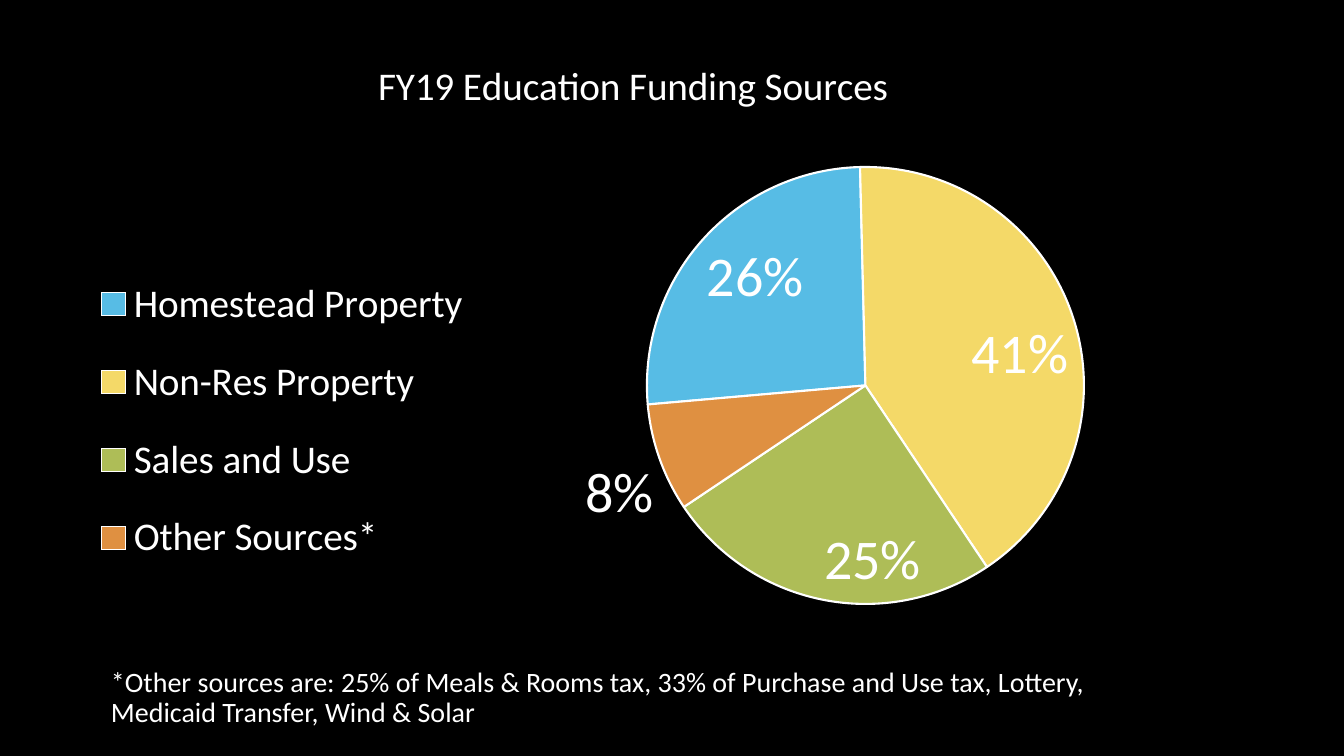
import pptx
import pptx.util
import pptx.chart.data
import pptx.dml.color
import pptx.enum.chart
import pptx.oxml

RGB = pptx.dml.color.RGBColor
BLACK = RGB(0x00, 0x00, 0x00)
WHITE = RGB(0xFF, 0xFF, 0xFF)
BLUE = RGB(0x57, 0xBC, 0xE5)
YELLOW = RGB(0xF4, 0xD9, 0x68)
GREEN = RGB(0xAE, 0xBD, 0x57)
ORANGE = RGB(0xDF, 0x90, 0x41)
FONT = "Calibri"
SPOT = pptx.enum.chart.XL_LABEL_POSITION
NS = "http://schemas.openxmlformats.org/drawingml/2006/chart"


def px(n):
    return pptx.util.Emu(round(n * 12192000 / 1344))


def style(font, size):
    font.name = FONT
    font.size = pptx.util.Pt(size)
    font.bold = False
    font.color.rgb = WHITE


deck = pptx.Presentation()
deck.slide_width, deck.slide_height = px(1344), px(756)
slide = deck.slides.add_slide(deck.slide_layouts[6])
slide.background.fill.solid()
slide.background.fill.fore_color.rgb = BLACK

sources = [
    ("Homestead Property", 0.26, BLUE, SPOT.INSIDE_END),
    ("Non-Res Property", 0.41, YELLOW, SPOT.INSIDE_END),
    ("Sales and Use", 0.25, GREEN, SPOT.INSIDE_END),
    ("Other Sources*", 0.08, ORANGE, SPOT.OUTSIDE_END),
]
data = pptx.chart.data.CategoryChartData(number_format="0%")
data.categories = [source[0] for source in sources]
data.add_series("Series 1", [source[1] for source in sources])
left, top, width, height = 74, 33, 1119, 655
chart = slide.shapes.add_chart(
    pptx.enum.chart.XL_CHART_TYPE.PIE, px(left), px(top), px(width), px(height), data
).chart
style(chart.font, 10)

chart.has_title = True
title = chart.chart_title
title.include_in_layout = False
title.text_frame.text = "FY19 Education Funding Sources"
style(title.text_frame.paragraphs[0].runs[0].font, 28)

chart.has_legend = True
legend = chart.legend
legend.position = pptx.enum.chart.XL_LEGEND_POSITION.LEFT
legend.include_in_layout = False
style(legend.font, 28)

pie = chart.plots[0]
pie.vary_by_categories = True
ring = pie.series[0]
labels = ring.data_labels
labels.show_value = True
labels.show_percentage = False
labels.number_format = "0%"
labels.number_format_is_linked = False
style(labels.font, 40)
for i, (name, share, color, spot) in enumerate(sources):
    point = ring.points[i]
    point.format.fill.solid()
    point.format.fill.fore_color.rgb = color
    point.format.line.color.rgb = WHITE
    point.format.line.width = pptx.util.Pt(1.5)
    style(point.data_label.font, 40)
    point.data_label.position = spot

tree = chart.element
turn = tree.find(f".//{{{NS}}}firstSliceAng")
if turn is None:
    turn = pptx.oxml.parse_xml(f'<c:firstSliceAng xmlns:c="{NS}"/>')
    tree.find(f".//{{{NS}}}pieChart").append(turn)
turn.set("val", "265")

places = [
    ("title", "tx", (371, 52), None),
    ("plotArea", None, (647, 167), (437, 437)),
    ("legend", "legendPos", (92, 250), (380, 342)),
]
for part, prior, (x, y), size in places:
    node = tree.find(f".//{{{NS}}}{part}")
    for old in node.findall(f"{{{NS}}}layout"):
        node.remove(old)
    inner = '<c:layoutTarget val="inner"/>' if part == "plotArea" else ""
    parts = [("x", (x - left) / width), ("y", (y - top) / height)]
    if size:
        parts += [("w", size[0] / width), ("h", size[1] / height)]
    modes = "".join(f'<c:{key}Mode val="edge"/>' for key in "xy")
    spans = "".join(f'<c:{key} val="{val:.4f}"/>' for key, val in parts)
    layout = pptx.oxml.parse_xml(
        f'<c:layout xmlns:c="{NS}"><c:manualLayout>{inner}{modes}{spans}'
        "</c:manualLayout></c:layout>"
    )
    if prior:
        node.find(f"{{{NS}}}{prior}").addnext(layout)
    else:
        node.insert(0, layout)

note = slide.shapes.add_textbox(px(101), px(663), px(1092), px(72)).text_frame
note.word_wrap = True
note.text = (
    "*Other sources are: 25% of Meals & Rooms tax, 33% of Purchase and Use tax, "
    "Lottery, Medicaid Transfer, Wind & Solar"
)
note.paragraphs[0].line_spacing = 0.9
style(note.paragraphs[0].runs[0].font, 20)

deck.save("out.pptx")
